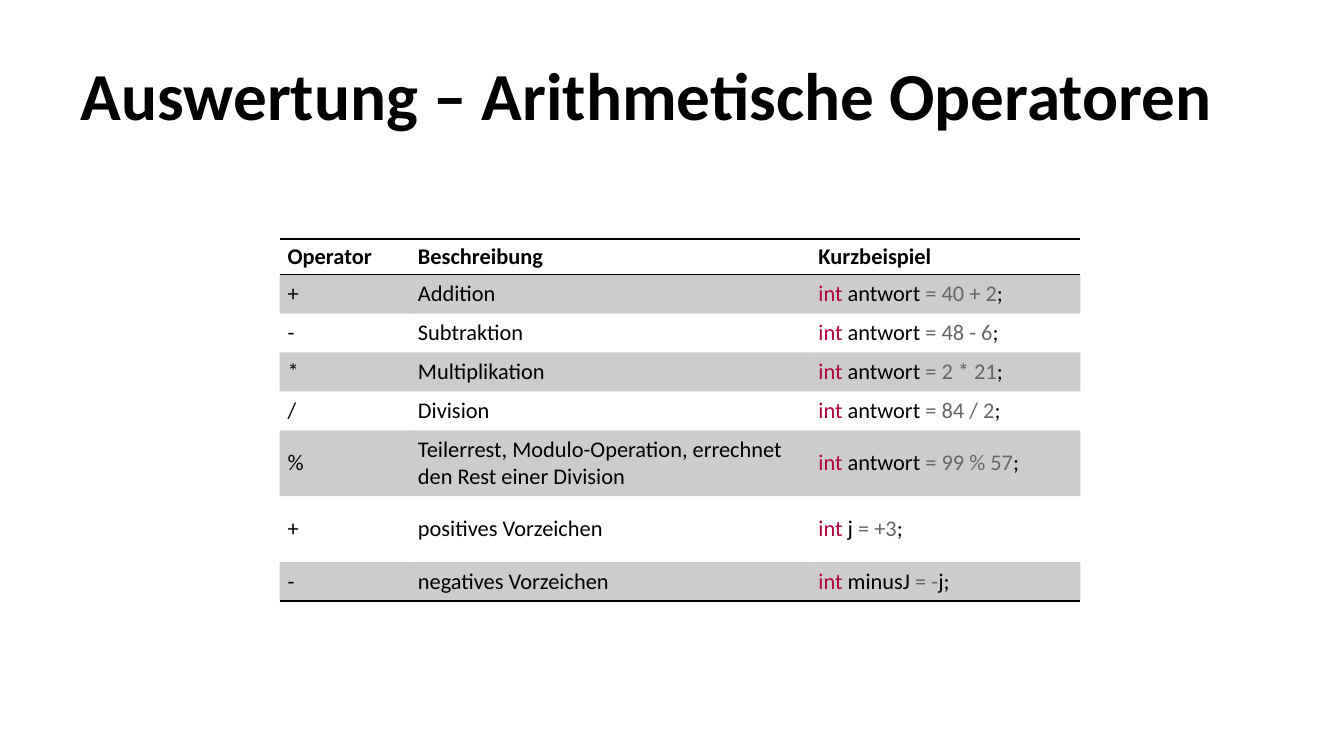
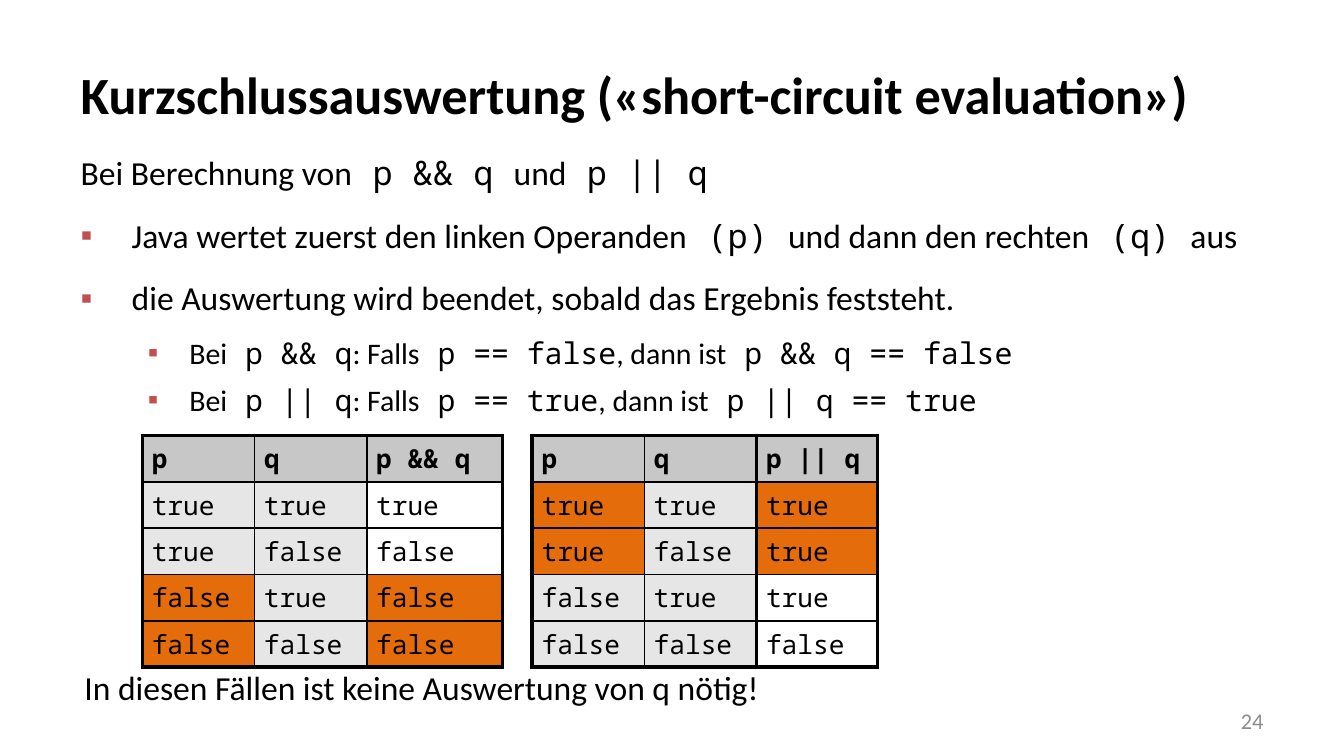
import pptx
import pptx.dml.color
import pptx.enum.text
import pptx.oxml.ns
import pptx.util
from lxml import etree

BLACK = pptx.dml.color.RGBColor(0x00, 0x00, 0x00)
CRIMSON = pptx.dml.color.RGBColor(0xB0, 0x00, 0x40)
VALUE_GRAY = pptx.dml.color.RGBColor(0x66, 0x66, 0x66)
NUMBER_GRAY = pptx.dml.color.RGBColor(0x8C, 0x8C, 0x8C)
HEADER_GRAY = pptx.dml.color.RGBColor(0xC7, 0xC7, 0xC7)
LIGHT_GRAY = pptx.dml.color.RGBColor(0xE6, 0xE6, 0xE6)
ORANGE = pptx.dml.color.RGBColor(0xE4, 0x6C, 0x0A)
BULLET_RED = pptx.dml.color.RGBColor(0xC0, 0x50, 0x4D)

STYLES = {
    "text": ("Calibri", BLACK),
    "code": ("Noto Sans Mono", BLACK),
    "keyword": ("Calibri", CRIMSON),
    "value": ("Calibri", VALUE_GRAY),
    "number": ("Calibri", NUMBER_GRAY),
}
PLAIN_TABLE = "{2D5ABB26-0587-4C30-8999-92F81FD0307C}"
LEFT = pptx.enum.text.PP_ALIGN.LEFT
RIGHT = pptx.enum.text.PP_ALIGN.RIGHT
MIDDLE = pptx.enum.text.MSO_ANCHOR.MIDDLE
qn = pptx.oxml.ns.qn

# Square grid cells: the slide is 100 columns wide and 56.25 rows high
GRID = pptx.util.Inches(0.1)


def write_runs(para, pieces, size, bold=False):
    """Add (text, style name) pieces to a paragraph."""
    for text, style in pieces:
        span = para.add_run()
        span.text = text
        span.font.name, span.font.color.rgb = STYLES[style]
        span.font.size = pptx.util.Pt(size)
        span.font.bold = bold


def style_cell(cell, margins, edges, fill):
    """Set margins (x, y) in grid cells, edge widths in points and the fill."""
    cell.margin_left = cell.margin_right = int(margins[0] * GRID)
    cell.margin_top = cell.margin_bottom = int(margins[1] * GRID)
    properties = cell._tc.get_or_add_tcPr()
    for side in "LRTB":
        if side in edges:
            width = str(pptx.util.Pt(edges[side]))
            line = etree.SubElement(properties, qn(f"a:ln{side}"), w=width)
            solid = etree.SubElement(line, qn("a:solidFill"))
            etree.SubElement(solid, qn("a:srgbClr"), val=str(BLACK))
    if fill is None:
        cell.fill.background()
    else:
        cell.fill.solid()
        cell.fill.fore_color.rgb = fill


deck = pptx.Presentation()
deck.slide_width = int(100 * GRID)
deck.slide_height = int(56.25 * GRID)

# Slides and titles
slides = []
for layout, title_text, size in [
    (5, "Auswertung – Arithmetische Operatoren", 36),
    (1, "Kurzschlussauswertung («short-circuit evaluation»)", 28),
]:
    slide = deck.slides.add_slide(deck.slide_layouts[layout])
    title = slide.shapes.title
    title.left, title.top, title.width, title.height = [
        int(n * GRID) for n in (5, 2.3, 90, 9.4)]
    title.text_frame.vertical_anchor = MIDDLE
    title.text_frame.auto_size = pptx.enum.text.MSO_AUTO_SIZE.NONE
    title.text_frame.paragraphs[0].alignment = LEFT
    write_runs(title.text_frame.paragraphs[0], [(title_text, "text")], size, True)
    slides.append(slide)
operator_slide, evaluation_slide = slides

# Operator table
operators = [
    ("+", "Addition", "antwort ", "= 40 + 2", ";"),
    ("-", "Subtraktion", "antwort ", "= 48 - 6", ";"),
    ("*", "Multiplikation", "antwort ", "= 2 * 21", ";"),
    ("/", "Division", "antwort ", "= 84 / 2", ";"),
    ("%", "Teilerrest, Modulo-Operation, errechnet den Rest einer Division",
     "antwort ", "= 99 % 57", ";"),
    ("+", "positives Vorzeichen", "j ", "= +3", ";"),
    ("-", "negatives Vorzeichen", "minusJ ", "= -", "j;"),
]
operator_rows = [[[(name, "text")] for name in ("Operator", "Beschreibung", "Kurzbeispiel")]]
for symbol, meaning, variable, value, ending in operators:
    example = [("int ", "keyword"), (variable, "text"), (value, "value"), (ending, "text")]
    operator_rows.append([[(symbol, "text")], [(meaning, "text")], example])

widths = [9.7, 29.8, 20.1]
heights = [2.6, 2.9, 2.9, 2.9, 2.9, 4.9, 4.9, 2.9]
frame = operator_slide.shapes.add_table(
    len(heights), len(widths), int(20.8 * GRID), int(17.8 * GRID),
    int(sum(widths) * GRID), int(sum(heights) * GRID))
table = frame.table
table.first_row = table.horz_banding = False
table._tbl.tblPr.find(qn("a:tableStyleId")).text = PLAIN_TABLE
for column, width in zip(table.columns, widths):
    column.width = int(width * GRID)
for r, (row, height) in enumerate(zip(operator_rows, heights)):
    table.rows[r].height = int(height * GRID)
    edges = {0: {"T": 1, "B": 1}, len(heights) - 1: {"B": 1}}.get(r, {})
    shaded = r % 2 == 1
    for c, pieces in enumerate(row):
        cell = table.cell(r, c)
        cell.vertical_anchor = MIDDLE
        style_cell(cell, (0.6, 0.3), edges, BLACK if shaded else None)
        if shaded:
            color = cell._tc.tcPr.find(qn("a:solidFill")).find(qn("a:srgbClr"))
            etree.SubElement(color, qn("a:alpha"), val="20000")
        write_runs(cell.text_frame.paragraphs[0], pieces, 12, bold=r == 0)

# Explanation list: (level, pieces), where level None has no bullet
explanation = [
    (None, [("Bei Berechnung von", "text"), (" p && q ", "code"),
            ("und", "text"), (" p || q", "code")]),
    (0, [("Java wertet zuerst den linken Operanden", "text"), (" (p) ", "code"),
         ("und dann den rechten", "text"), (" (q) ", "code"), ("aus", "text")]),
    (0, [("die Auswertung wird beendet, sobald das Ergebnis feststeht.", "text")]),
]
for operation, decisive in [("p && q", "false"), ("p || q", "true")]:
    explanation.append((1, [
        ("Bei", "text"), (f" {operation}", "code"), (": Falls", "text"),
        (f" p == {decisive}", "code"), (", dann ist", "text"),
        (f" {operation} == {decisive}", "code")]))

# Level: (indent, hanging, paragraph spacing, text size)
levels = {None: (0, 0, 6, 18), 0: (3.8, 3.8, 6, 18), 1: (8.1, 3.1, 3, 16)}
body = evaluation_slide.placeholders[1]
body.left, body.top, body.width, body.height = [
    int(n * GRID) for n in (5, 10.8, 90, 33.1)]
body.text_frame.auto_size = pptx.enum.text.MSO_AUTO_SIZE.NONE
for number, (level, pieces) in enumerate(explanation):
    para = body.text_frame.add_paragraph() if number else body.text_frame.paragraphs[0]
    indent, hanging, spacing, size = levels[level]
    para.level = level or 0
    para.space_before = para.space_after = pptx.util.Pt(spacing)
    properties = para._p.get_or_add_pPr()
    properties.set("marL", str(int(indent * GRID)))
    properties.set("indent", str(int(-hanging * GRID)))
    if level is None:
        etree.SubElement(properties, qn("a:buNone"))
    else:
        bullet_color = etree.SubElement(properties, qn("a:buClr"))
        etree.SubElement(bullet_color, qn("a:srgbClr"), val=str(BULLET_RED))
        etree.SubElement(properties, qn("a:buChar"), char="▪")
    write_runs(para, pieces, size)

# Truth tables: the decisive value of p settles the result without q
p_values = ["true", "true", "false", "false"]
q_values = ["true", "false", "true", "false"]
truth_columns = {
    "p": p_values,
    "q": q_values,
    "p && q": ["true", "false", "false", "false"],
    "p || q": ["true", "true", "true", "false"],
}
side_edges = {"p": (2.25, 1), "q": (1, 1.5), "p && q": (1.5, 2.25), "p || q": (1, 2.25)}
truth_tables = [
    (10.6, {"p": 8.35, "q": 8.35, "p && q": 10.1}, "false"),
    (56.3, {"p || q": 9}, "true"),
    (39.6, {"p": 8.35, "q": 8.35}, "true"),
]
row_count = len(p_values) + 1
for left, widths, decisive in truth_tables:
    frame = evaluation_slide.shapes.add_table(
        row_count, len(widths), int(left * GRID), int(32.4 * GRID),
        int(sum(widths.values()) * GRID), int(15.4 * GRID))
    table = frame.table
    table.first_row = table.horz_banding = False
    table._tbl.tblPr.find(qn("a:tableStyleId")).text = PLAIN_TABLE
    for c, (name, width) in enumerate(widths.items()):
        table.columns[c].width = int(width * GRID)
        for r, value in enumerate([name] + truth_columns[name]):
            if r == 0:
                fill = HEADER_GRAY
            elif name != "q" and p_values[r - 1] == decisive:
                fill = ORANGE
            else:
                fill = LIGHT_GRAY if name in ("p", "q") else None
            edges = {
                "L": side_edges[name][0],
                "R": side_edges[name][1],
                "T": 2.25 if r == 0 else 1,
                "B": 2.25 if r == row_count - 1 else 1,
            }
            cell = table.cell(r, c)
            style_cell(cell, (0.7, 0.4), edges, fill)
            write_runs(cell.text_frame.paragraphs[0], [(value, "code")], 14, bold=r == 0)

# Closing remark and page number
for bounds, text, style, size, alignment, spacing in [
    ((71.7, 52.1, 23.3, 3), "24", "number", 12, RIGHT, 0),
    ((5.3, 49.1, 74, 4), "In diesen Fällen ist keine Auswertung von q nötig!",
     "text", 18, LEFT, 6),
]:
    box = evaluation_slide.shapes.add_textbox(*[int(n * GRID) for n in bounds])
    box.text_frame.word_wrap = True
    if style == "number":
        box.text_frame.vertical_anchor = MIDDLE
    para = box.text_frame.paragraphs[0]
    para.alignment = alignment
    para.space_before = para.space_after = pptx.util.Pt(spacing)
    write_runs(para, [(text, style)], size)

deck.save("out.pptx")
